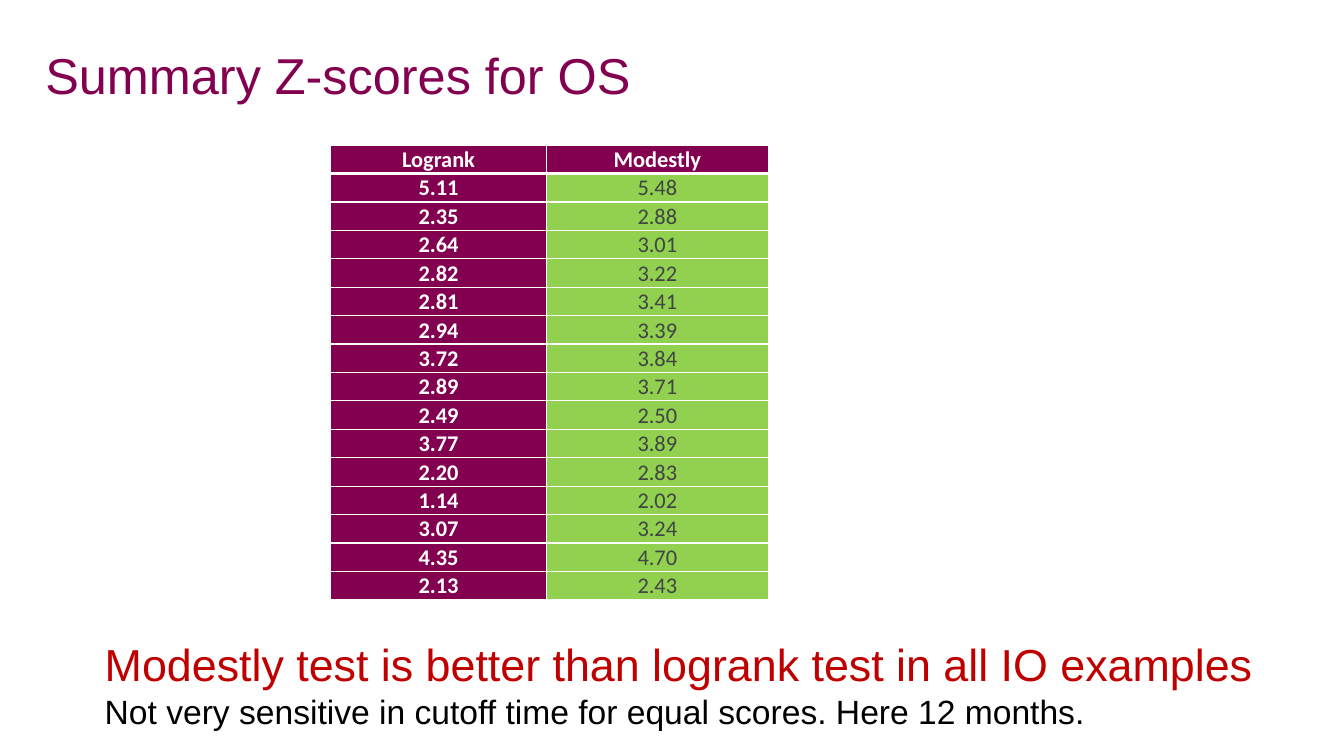
from lxml import etree
from pptx import Presentation
from pptx.dml.color import RGBColor
from pptx.enum.text import MSO_ANCHOR, MSO_AUTO_SIZE, PP_ALIGN
from pptx.oxml.ns import qn
from pptx.util import Inches, Pt

TOP, BOTTOM = MSO_ANCHOR.TOP, MSO_ANCHOR.BOTTOM
CENTER, LEFT = PP_ALIGN.CENTER, PP_ALIGN.LEFT
NO_FIT, GROW = MSO_AUTO_SIZE.NONE, MSO_AUTO_SIZE.SHAPE_TO_FIT_TEXT

PLUM, GREEN, RED = "830051", "92D050", "C00000"
WHITE, GRAY, BLACK = "FFFFFF", "3F4444", "000000"

HEADS = ("Logrank", "Modestly")
SCORES = [
    ("5.11", "5.48"), ("2.35", "2.88"), ("2.64", "3.01"),
    ("2.82", "3.22"), ("2.81", "3.41"), ("2.94", "3.39"),
    ("3.72", "3.84"), ("2.89", "3.71"), ("2.49", "2.50"),
    ("3.77", "3.89"), ("2.20", "2.83"), ("1.14", "2.02"),
    ("3.07", "3.24"), ("4.35", "4.70"), ("2.13", "2.43"),
]
NOTES = [
    ("Modestly test is better than logrank test in all IO examples", 32, RED),
    ("Not very sensitive in cutoff time for equal scores. Here 12 months.",
     24, BLACK),
]


def color(code):
    return RGBColor.from_string(code)


def style(para, size, code, face="Arial", bold=False, align=LEFT):
    para.alignment = align
    for run in para.runs:
        font = run.font
        font.name, font.size, font.bold = face, Pt(size), bold
        font.color.rgb = color(code)


def border(cell, side, width):
    """Draw one white edge; call it before the cell is filled."""
    props = cell._tc.get_or_add_tcPr()
    line = etree.SubElement(props, qn("a:ln" + side), w=str(Pt(width)))
    fill = etree.SubElement(line, qn("a:solidFill"))
    etree.SubElement(fill, qn("a:srgbClr"), val=WHITE)


def add_title(slide, text):
    title = slide.shapes.title
    title.left, title.top = Inches(0.45), Inches(0.44)
    title.width, title.height = Inches(12.44), Inches(1.1)
    frame = title.text_frame
    frame.text = text
    frame.auto_size, frame.vertical_anchor = NO_FIT, TOP
    frame.margin_left = frame.margin_right = 0
    frame.margin_top = frame.margin_bottom = 0
    style(frame.paragraphs[0], 36, PLUM)


def fill_cell(cell, text, head, first):
    dark = head or first
    for side in "LRT":
        border(cell, side, 3 if side == "T" and first is None else 1)
    border(cell, "B", 3 if head else 1)
    cell.fill.solid()
    cell.fill.fore_color.rgb = color(PLUM if dark else GREEN)
    cell.margin_left = cell.margin_right = cell.margin_top = Inches(0.01)
    cell.margin_bottom = 0
    cell.vertical_anchor = BOTTOM
    cell.text_frame.text = text
    style(cell.text_frame.paragraphs[0], 16, WHITE if dark else GRAY,
          "Calibri", dark, CENTER)


def add_scores(slide):
    rows = [HEADS] + SCORES
    table = slide.shapes.add_table(
        len(rows), len(HEADS), Inches(3.28), Inches(1.44),
        Inches(4.34), Inches(4.35)).table
    table.columns[0].width = Inches(2.14)
    table.columns[1].width = Inches(2.2)
    for r, row in enumerate(rows):
        for c, text in enumerate(row):
            fill_cell(table.cell(r, c), text, r == 0, c == 0)


def add_notes(slide):
    box = slide.shapes.add_textbox(
        Inches(0.94), Inches(6.27), Inches(12.02), Inches(1.04))
    frame = box.text_frame
    frame.word_wrap, frame.auto_size = True, GROW
    frame.text = "\n".join(text for text, size, code in NOTES)
    for para, (text, size, code) in zip(frame.paragraphs, NOTES):
        style(para, size, code)


def main():
    deck = Presentation()
    deck.slide_width, deck.slide_height = Inches(13.33), Inches(7.5)
    slide = deck.slides.add_slide(deck.slide_layouts[5])
    add_title(slide, "Summary Z-scores for OS")
    add_scores(slide)
    add_notes(slide)
    deck.save("out.pptx")


if __name__ == "__main__":
    main()
